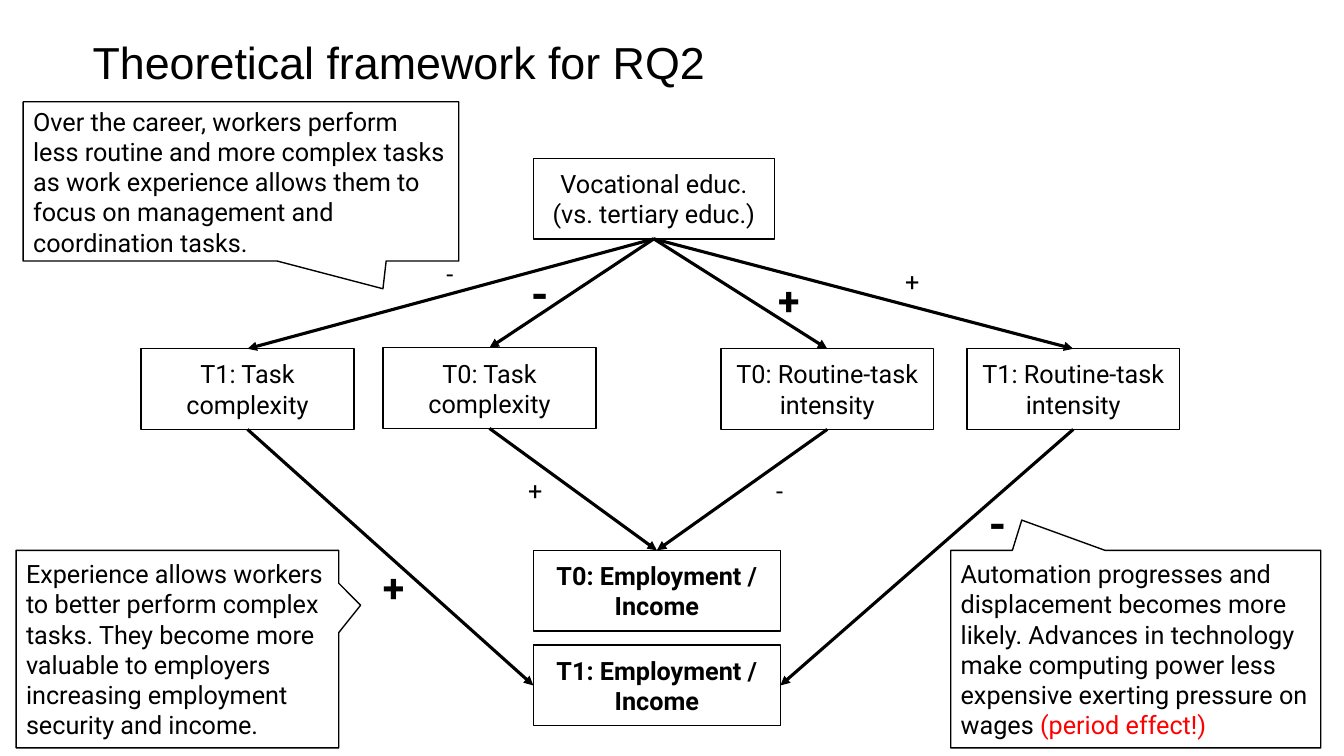
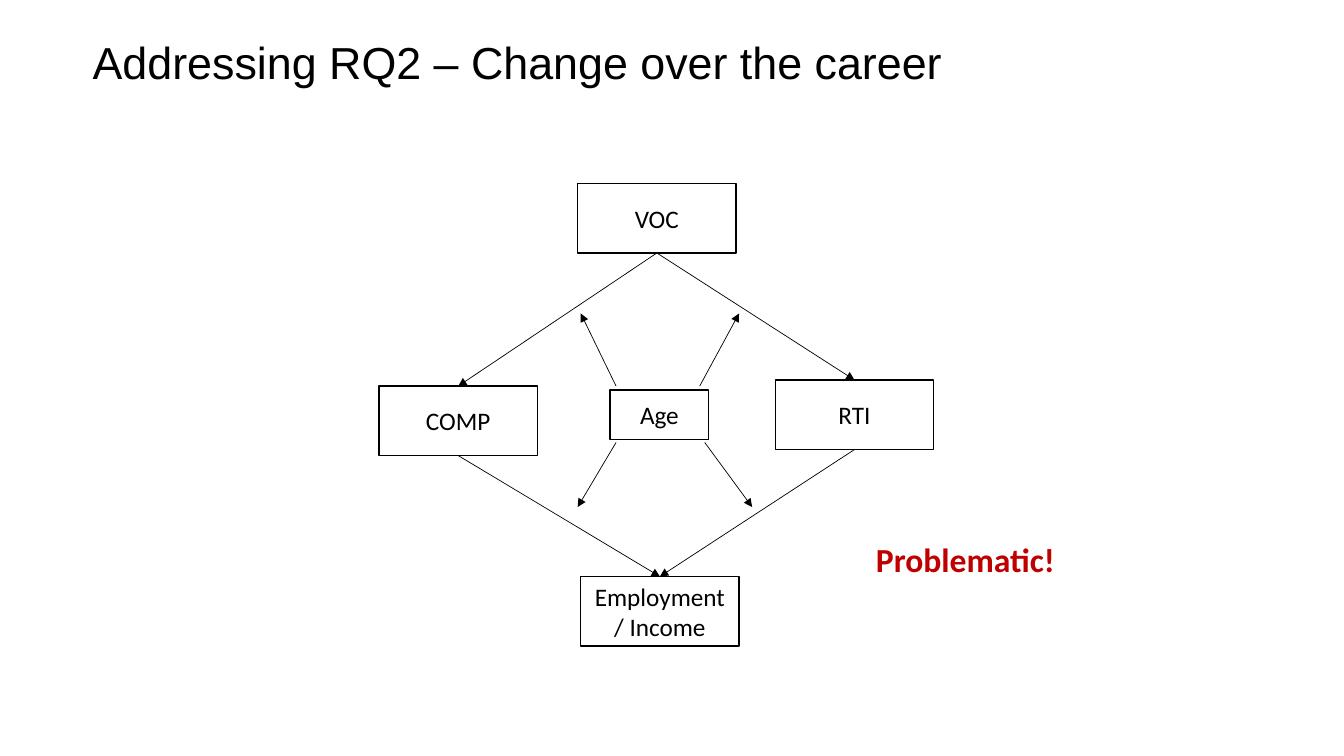
import lxml.etree
import pptx
import pptx.dml.color
import pptx.enum.shapes
import pptx.enum.text
import pptx.oxml.ns
import pptx.util

Inches = pptx.util.Inches
Pt = pptx.util.Pt
SHAPE = pptx.enum.shapes.MSO_SHAPE
ALIGN = pptx.enum.text.PP_ALIGN
ANCHOR = pptx.enum.text.MSO_ANCHOR
qn = pptx.oxml.ns.qn

COLORS = {"ink": "000000", "paper": "FFFFFF", "period": "FF0000", "warning": "C00000"}
TOP, LEFT, BOTTOM, RIGHT = range(4)
BODY_SIZE = 18


def rgb(name):
    return pptx.dml.color.RGBColor.from_string(COLORS[name])


def format_run(run, font, size=BODY_SIZE, bold=False, color="ink"):
    run.font.name = font
    run.font.size = Pt(size)
    run.font.bold = bold
    run.font.color.rgb = rgb(color)


def add_title(slide, text):
    title = slide.shapes.add_textbox(Inches(0.82), Inches(0.3), Inches(11.5), Inches(0.69))
    frame = title.text_frame
    frame.word_wrap = True
    frame.vertical_anchor = ANCHOR.MIDDLE
    frame.text = text
    frame.paragraphs[0].line_spacing = 0.9
    format_run(frame.paragraphs[0].runs[0], "Arial", 32)


def add_outlined(slide, preset, area, text, font, align, bold=False):
    """Add a black-outlined shape with vertically centred text."""
    shape = slide.shapes.add_shape(preset, *map(Inches, area))
    shape.shadow.inherit = False
    shape.line.color.rgb = rgb("ink")
    shape.line.width = Pt(1)
    frame = shape.text_frame
    frame.word_wrap = True
    frame.vertical_anchor = ANCHOR.MIDDLE
    frame.text = text
    frame.paragraphs[0].alignment = align
    format_run(frame.paragraphs[0].runs[0], font, bold=bold)
    return shape


def add_node(slide, area, text, font, bold=False):
    node = add_outlined(slide, SHAPE.RECTANGLE, area, text, font, ALIGN.CENTER, bold)
    node.fill.solid()
    node.fill.fore_color.rgb = rgb("paper")
    return node


def add_callout(slide, area, pointer, text):
    """Add a speech box; pointer is the tip's offset from the centre as a share of the size."""
    callout = add_outlined(slide, SHAPE.RECTANGULAR_CALLOUT, area, text, "Roboto", ALIGN.LEFT)
    callout.fill.background()
    callout.adjustments[0], callout.adjustments[1] = pointer
    return callout


def add_label(slide, area, text, font, size=BODY_SIZE, bold=False, color="ink"):
    label = slide.shapes.add_textbox(*map(Inches, area))
    frame = label.text_frame
    frame.word_wrap = False
    frame.auto_size = pptx.enum.text.MSO_AUTO_SIZE.SHAPE_TO_FIT_TEXT
    frame.text = text
    format_run(frame.paragraphs[0].runs[0], font, size, bold, color)


def add_arrow(slide, width, start=(0, 0), end=(0, 0)):
    arrow = slide.shapes.add_connector(
        pptx.enum.shapes.MSO_CONNECTOR.STRAIGHT, *map(Inches, (*start, *end)))
    arrow.line.color.rgb = rgb("ink")
    arrow.line.width = Pt(width)
    properties = arrow._element.spPr
    lxml.etree.SubElement(properties.find(qn("a:ln")), qn("a:tailEnd"), type="triangle")
    lxml.etree.SubElement(properties, qn("a:effectLst"))
    return arrow


def link(slide, width, source, target, target_side=TOP):
    """Join the bottom of source to one side of target."""
    arrow = add_arrow(slide, width)
    arrow.begin_connect(source, BOTTOM)
    arrow.end_connect(target, target_side)


def build_framework(slide):
    add_title(slide, "Theoretical framework for RQ2")

    education = add_node(slide, (5.29, 1.57, 2.39, 0.8),
                         "Vocational educ. (vs. tertiary educ.)", "Roboto")
    complexity_t1, complexity_t0, routine_t0, routine_t1 = [
        add_node(slide, (left, top, 2.11, 0.8), text, "Roboto")
        for left, top, text in (
            (1.4, 3.46, "T1: Task complexity"),
            (3.8, 3.45, "T0: Task complexity"),
            (7.15, 3.46, "T0: Routine-task intensity"),
            (9.59, 3.46, "T1: Routine-task intensity"))]
    outcome_t0, outcome_t1 = [
        add_node(slide, (5.29, top, 2.45, 0.8), f"{period}: Employment / Income", "Roboto", True)
        for period, top in (("T0", 5.46), ("T1", 6.4))]

    for mediator, outcome, side in (
            (complexity_t1, outcome_t1, LEFT), (complexity_t0, outcome_t0, TOP),
            (routine_t0, outcome_t0, TOP), (routine_t1, outcome_t1, RIGHT)):
        link(slide, 2.25, education, mediator)
        link(slide, 2.25, mediator, outcome, side)

    weak_effects = (("-", 4.33, 2.51), ("+", 8.88, 2.59), ("+", 5.14, 4.67), ("-", 7.6, 4.67))
    for sign, left, top in weak_effects:
        add_label(slide, (left, top, 0.35 if sign == "+" else 0.29, 0.4), sign, "Roboto")
    strong_effects = (("-", 5.17, 2.59), ("+", 7.62, 2.69), ("+", 3.7, 5.54), ("-", 9.71, 4.87))
    for sign, left, top in strong_effects:
        width, height, size = (0.43, 0.57, 28) if sign == "+" else (0.35, 0.64, 32)
        add_label(slide, (left, top, width, height), sign, "Roboto", size, True)

    add_callout(slide, (0.23, 1.01, 4.32, 1.58), (0.326, 0.674),
                "Over the career, workers perform less routine and more complex tasks as work "
                "experience allows them to focus on management and coordination tasks.")
    add_callout(slide, (0.16, 5.46, 3.2, 1.96), (0.568, -0.222),
                "Experience allows workers to better perform complex tasks. They become more "
                "valuable to employers increasing employment security and income.")
    automation = add_callout(
        slide, (9.43, 5.46, 3.67, 1.96), (-0.308, -0.653),
        "Automation progresses and displacement becomes more likely. Advances in technology "
        "make computing power less expensive exerting pressure on wages ")
    period_effect = automation.text_frame.paragraphs[0].add_run()
    period_effect.text = "(period effect!)"
    format_run(period_effect, "Roboto", color="period")


def build_career_change(slide):
    add_title(slide, "Addressing RQ2 – Change over the career")

    vocational, complexity, routine, outcome = [
        add_node(slide, (left, top, 1.57, 0.69), text, "Calibri")
        for left, top, text in (
            (5.73, 1.82, "VOC"), (3.76, 3.83, "COMP"),
            (7.69, 3.77, "RTI"), (5.76, 5.72, "Employment / Income"))]
    for mediator in (complexity, routine):
        link(slide, 0.5, vocational, mediator)
        link(slide, 0.5, mediator, outcome)

    add_node(slide, (6.05, 3.87, 0.98, 0.49), "Age", "Calibri")
    for start, end in (
            ((6.11, 4.39), (5.73, 5.03)), ((6.11, 3.83), (5.76, 3.11)),
            ((6.99, 4.39), (7.46, 5.03)), ((6.94, 3.83), (7.33, 3.11))):
        add_arrow(slide, 0.5, start, end)

    add_label(slide, (8.59, 5.3, 2, 0.5), "Problematic!", "Calibri", 24, True, "warning")


def main():
    deck = pptx.Presentation()
    deck.slide_width = Inches(13.33)
    deck.slide_height = Inches(7.5)
    for build in (build_framework, build_career_change):
        build(deck.slides.add_slide(deck.slide_layouts[6]))
    deck.save("out.pptx")


if __name__ == "__main__":
    main()
